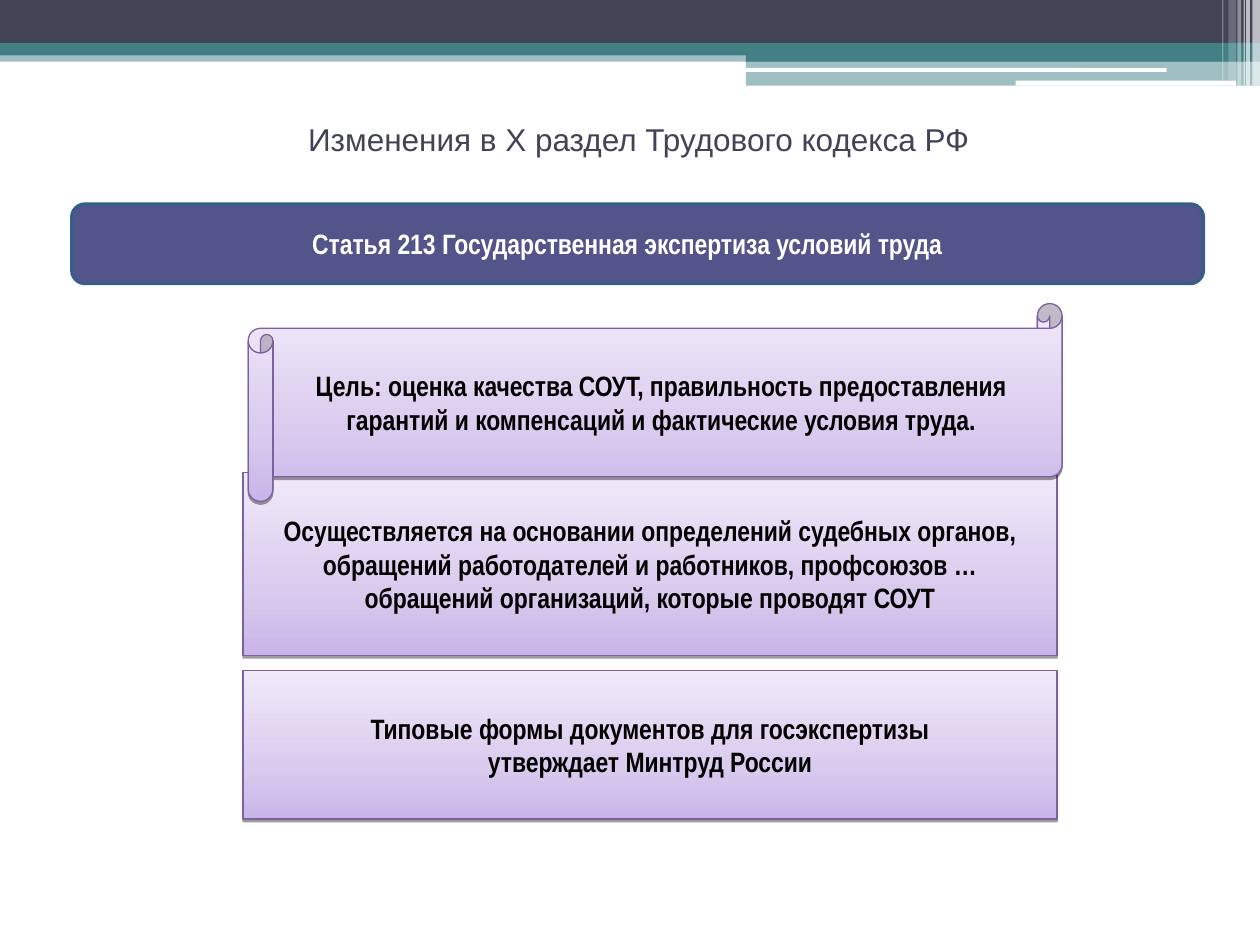
from lxml import etree
from pptx import Presentation
from pptx.dml.color import RGBColor
from pptx.enum.shapes import MSO_SHAPE
from pptx.enum.text import MSO_ANCHOR, PP_ALIGN
from pptx.oxml.ns import qn
from pptx.util import Inches, Pt

RECT = MSO_SHAPE.RECTANGLE
ROUNDED = MSO_SHAPE.ROUNDED_RECTANGLE
SCROLL = MSO_SHAPE.HORIZONTAL_SCROLL
CENTER = PP_ALIGN.CENTER
MIDDLE = MSO_ANCHOR.MIDDLE

WHITE = RGBColor(0xFF, 0xFF, 0xFF)
BLACK = RGBColor(0x00, 0x00, 0x00)
SLATE = RGBColor(0x42, 0x44, 0x56)
TEAL = RGBColor(0x43, 0x80, 0x86)
INDIGO = RGBColor(0x53, 0x54, 0x8A)
NAVY = RGBColor(0x38, 0x5D, 0x8A)
PURPLE = RGBColor(0x7D, 0x60, 0xA0)
LILAC_STOPS = [
    (0, RGBColor(0xF0, 0xEA, 0xF9)),
    (65, RGBColor(0xD9, 0xCB, 0xEE)),
    (100, RGBColor(0xC9, 0xB5, 0xE8)),
]

prs = Presentation()
prs.slide_width = Inches(10)
prs.slide_height = Inches(7.5)
slide = prs.slides.add_slide(prs.slide_layouts[5])


def add_shape(kind, x, y, w, h):
    s = slide.shapes.add_shape(kind, Inches(x), Inches(y), Inches(w), Inches(h))
    s.shadow.inherit = False
    return s


def write_text(s, lines, size, font, color, bold):
    tf = s.text_frame
    tf.word_wrap = True
    tf.vertical_anchor = MIDDLE
    tf.text = "\n".join(lines)
    for p in tf.paragraphs:
        p.alignment = CENTER
        p.font.size = Pt(size)
        p.font.name = font
        p.font.bold = bold
        p.font.color.rgb = color


header_bars = [
    (RECT, 0, 0.4, 10, 0.09, TEAL, 50),
    (RECT, 0, 0, 10, 0.34, SLATE, 100),
    (RECT, 0, 0.34, 10, 0.1, TEAL, 100),
    (RECT, 5.92, 0.39, 4.08, 0.1, TEAL, 100),
    (RECT, 5.92, 0.48, 4.08, 0.2, TEAL, 50),
    (ROUNDED, 5.91, 0.54, 3.35, 0.03, WHITE, 100),
    (ROUNDED, 8.06, 0.64, 1.75, 0.04, WHITE, 100),
    (RECT, 9.94, 0, 0.06, 0.68, WHITE, 65),
    (RECT, 9.89, 0, 0.03, 0.68, WHITE, 65),
    (RECT, 9.87, 0, 0.01, 0.68, WHITE, 60),
    (RECT, 9.82, 0, 0.03, 0.68, WHITE, 40),
    (RECT, 9.75, 0, 0.06, 0.64, WHITE, 20),
    (RECT, 9.7, 0, 0.01, 0.64, WHITE, 30),
]
for kind, x, y, w, h, color, opacity in header_bars:
    bar = add_shape(kind, x, y, w, h)
    bar.fill.solid()
    bar.fill.fore_color.rgb = color
    bar.line.fill.background()
    if opacity < 100:
        clr = bar._element.spPr.find(qn("a:solidFill"))[0]
        etree.SubElement(clr, qn("a:alpha"), val=str(opacity * 1000))

article = add_shape(ROUNDED, 0.57, 1.62, 8.98, 0.63)
article.adjustments[0] = 0.165
article.fill.solid()
article.fill.fore_color.rgb = INDIGO
article.line.color.rgb = NAVY
article.line.width = Pt(2)
article.text_frame.margin_right = Inches(0.26)
write_text(article, ["Статья 213 Государственная экспертиза условий труда"],
           16, "Arial Narrow", WHITE, True)

panels = [
    (RECT, 1.93, 5.32, 1.18,
     ["Типовые формы документов для госэкспертизы", "утверждает Минтруд России"]),
    (RECT, 1.93, 3.75, 1.45,
     ["Осуществляется на основании определений судебных органов, обращений "
      "работодателей и работников, профсоюзов … обращений организаций, "
      "которые проводят СОУТ"]),
    (SCROLL, 1.97, 2.41, 1.57,
     ["Цель: оценка качества СОУТ, правильность предоставления гарантий и "
      "компенсаций и фактические условия труда."]),
]
for kind, x, y, h, lines in panels:
    panel = add_shape(kind, x, y, 6.46, h)
    panel.fill.gradient()
    panel.fill.gradient_angle = 270
    panel.line.color.rgb = PURPLE
    panel.line.width = Pt(0.75)
    spPr = panel._element.spPr
    stops = spPr.find(qn("a:gradFill")).find(qn("a:gsLst"))
    for old in list(stops):
        stops.remove(old)
    for pos, color in LILAC_STOPS:
        stop = etree.SubElement(stops, qn("a:gs"), pos=str(pos * 1000))
        etree.SubElement(stop, qn("a:srgbClr"), val=str(color))
    shadow = etree.SubElement(spPr.find(qn("a:effectLst")), qn("a:outerShdw"),
                              blurRad="0", dist=str(Pt(1.6)), dir="5400000", rotWithShape="0")
    clr = etree.SubElement(shadow, qn("a:srgbClr"), val=str(BLACK))
    etree.SubElement(clr, qn("a:alpha"), val="38000")
    write_text(panel, lines, 16, "Arial Narrow", BLACK, True)

title = slide.shapes.title
title.left, title.top = Inches(0.57), Inches(0.81)
title.width, title.height = Inches(9), Inches(0.59)
write_text(title, ["Изменения в Х раздел Трудового кодекса РФ"], 18, "Arial", SLATE, False)

prs.save("out.pptx")
